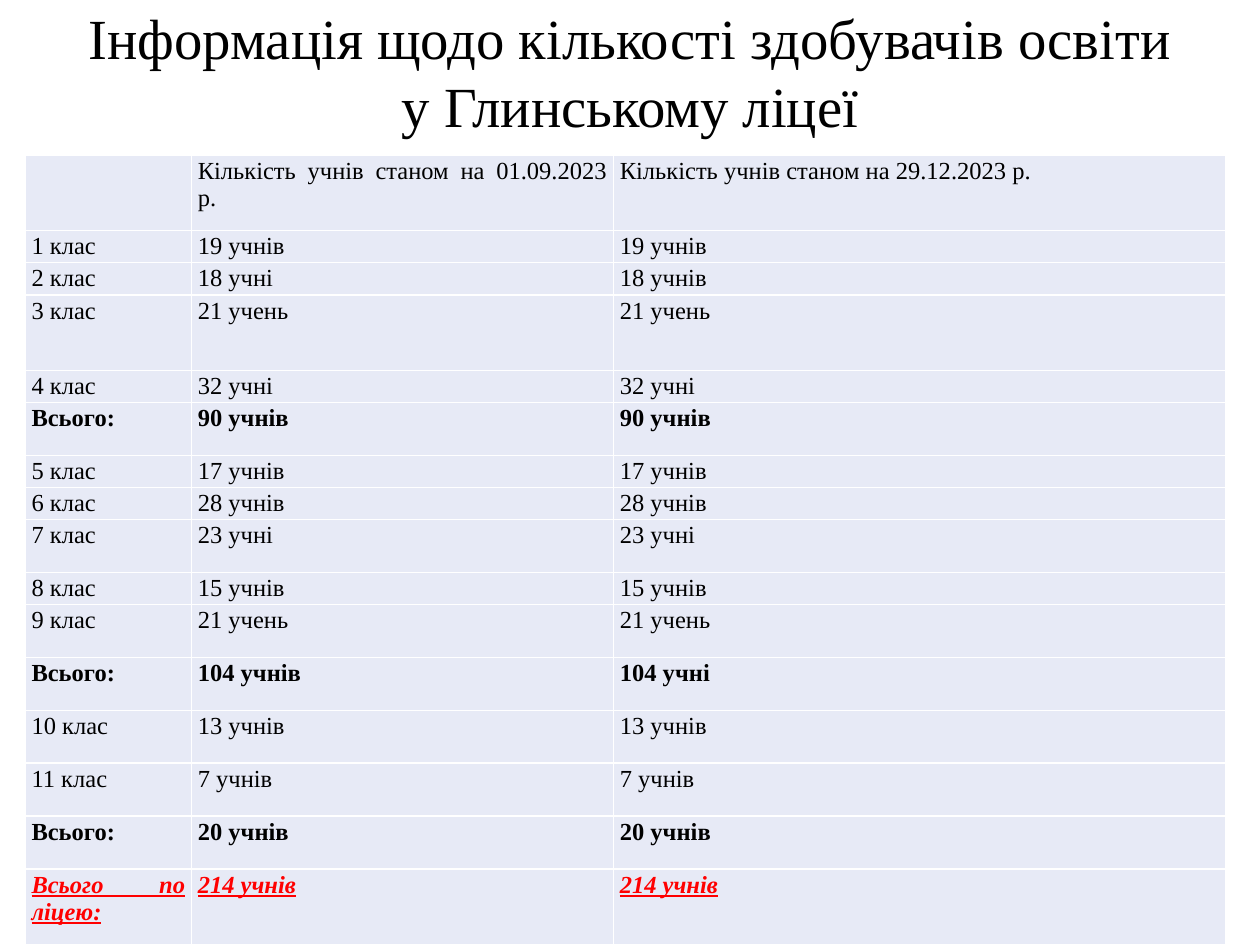
from dataclasses import dataclass

from lxml import etree
from pptx import Presentation
from pptx.dml.color import RGBColor
from pptx.enum.text import MSO_ANCHOR, MSO_AUTO_SIZE, PP_ALIGN
from pptx.oxml.ns import qn
from pptx.util import Inches, Pt

CENTER = PP_ALIGN.CENTER
JUSTIFY = PP_ALIGN.JUSTIFY
MIDDLE = MSO_ANCHOR.MIDDLE
NO_FIT = MSO_AUTO_SIZE.NONE


@dataclass(frozen=True)
class Theme:
    font: str = "Times New Roman"
    ink: str = "000000"
    alert: str = "FF0000"
    fill: str = "E7EAF6"
    rule: str = "FFFFFF"
    head: float = 32.4
    body: float = 14


THEME = Theme()
TITLE = "Інформація щодо кількості здобувачів освіти у Глинському ліцеї"
WIDTHS = (1.32, 3.35, 4.86)
LOW, MID, TALL = 0.24, 0.42, 0.6
PLAIN, TOTAL, GRAND = range(3)
ROWS = (
    (TALL, PLAIN, "", "Кількість учнів станом на 01.09.2023 р.",
     "Кількість учнів станом на 29.12.2023 р."),
    (LOW, PLAIN, "1 клас", "19 учнів", "19 учнів"),
    (LOW, PLAIN, "2 клас", "18 учні", "18 учнів"),
    (TALL, PLAIN, "3 клас", "21 учень", "21 учень"),
    (LOW, PLAIN, "4 клас", "32 учні", "32 учні"),
    (MID, TOTAL, "Всього:", "90 учнів", "90 учнів"),
    (LOW, PLAIN, "5 клас", "17 учнів", "17 учнів"),
    (LOW, PLAIN, "6 клас", "28 учнів", "28 учнів"),
    (MID, PLAIN, "7 клас", "23 учні", "23 учні"),
    (LOW, PLAIN, "8 клас", "15 учнів", "15 учнів"),
    (MID, PLAIN, "9 клас", "21 учень", "21 учень"),
    (MID, TOTAL, "Всього:", "104 учнів", "104 учні"),
    (MID, PLAIN, "10 клас", "13 учнів", "13 учнів"),
    (MID, PLAIN, "11 клас", "7 учнів", "7 учнів"),
    (MID, TOTAL, "Всього:", "20 учнів", "20 учнів"),
    (TALL, GRAND, "Всього по ліцею:", "214 учнів", "214 учнів"),
)


def style(font, size, color):
    font.name = THEME.font
    font.size = Pt(size)
    font.color.rgb = RGBColor.from_string(color)


def add_title(slide, left, top, width, height):
    title = slide.shapes.title
    title.left, title.top = Inches(left), Inches(top)
    title.width, title.height = Inches(width), Inches(height)
    frame = title.text_frame
    frame.text = TITLE
    frame.word_wrap = True
    frame.auto_size = NO_FIT
    frame.vertical_anchor = MIDDLE
    para = frame.paragraphs[0]
    para.alignment = CENTER
    style(para.runs[0].font, THEME.head, THEME.ink)


def add_rules(cell):
    props = cell._tc.get_or_add_tcPr()
    for index, side in enumerate(("lnL", "lnR", "lnT", "lnB")):
        line = etree.Element(qn(f"a:{side}"), w=str(Pt(1)))
        solid = etree.SubElement(line, qn("a:solidFill"))
        etree.SubElement(solid, qn("a:srgbClr"), val=THEME.rule)
        props.insert(index, line)


def fill_cell(cell, text, kind):
    cell.margin_left = cell.margin_right = Inches(0.05)
    cell.margin_top = cell.margin_bottom = Inches(0.02)
    cell.fill.solid()
    cell.fill.fore_color.rgb = RGBColor.from_string(THEME.fill)
    add_rules(cell)
    para = cell.text_frame.paragraphs[0]
    para.text = text
    para.alignment = JUSTIFY
    for run in para.runs:
        style(run.font, THEME.body, THEME.alert if kind == GRAND else THEME.ink)
        run.font.bold = kind != PLAIN
        run.font.italic = run.font.underline = kind == GRAND


def add_counts(slide, left, top, width):
    height = sum(row[0] for row in ROWS)
    table = slide.shapes.add_table(
        len(ROWS), len(WIDTHS), Inches(left), Inches(top),
        Inches(width), Inches(height)).table
    table.first_row = table.horz_banding = False
    for column, share in zip(table.columns, WIDTHS):
        column.width = Inches(width * share / sum(WIDTHS))
    for row, (tall, kind, *texts) in zip(table.rows, ROWS):
        row.height = Inches(tall)
        for cell, text in zip(row.cells, texts):
            fill_cell(cell, text, kind)


def main():
    deck = Presentation()
    deck.slide_width, deck.slide_height = Inches(10), Inches(7.5)
    slide = deck.slides.add_slide(deck.slide_layouts[5])
    add_title(slide, 0.5, -0.11, 9, 1.34)
    add_counts(slide, 0.2, 1.23, 9.53)
    deck.save("out.pptx")


if __name__ == "__main__":
    main()
